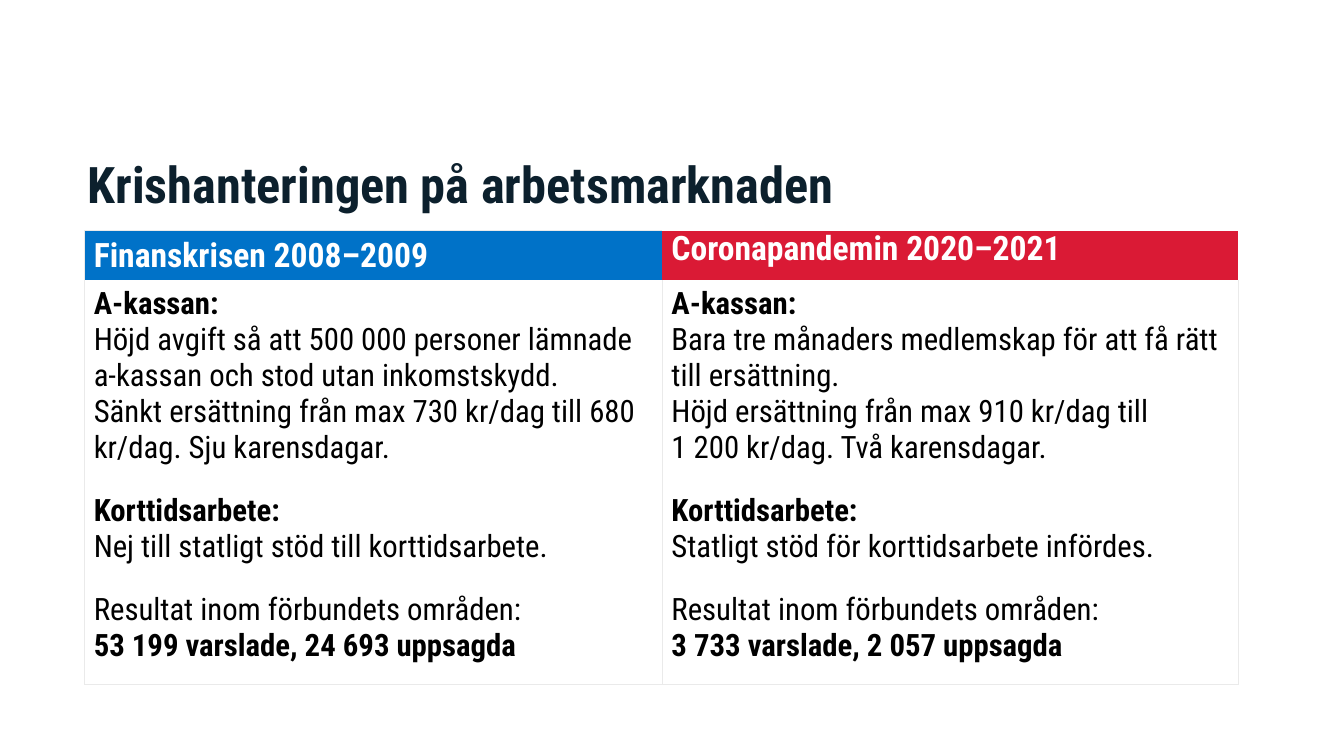
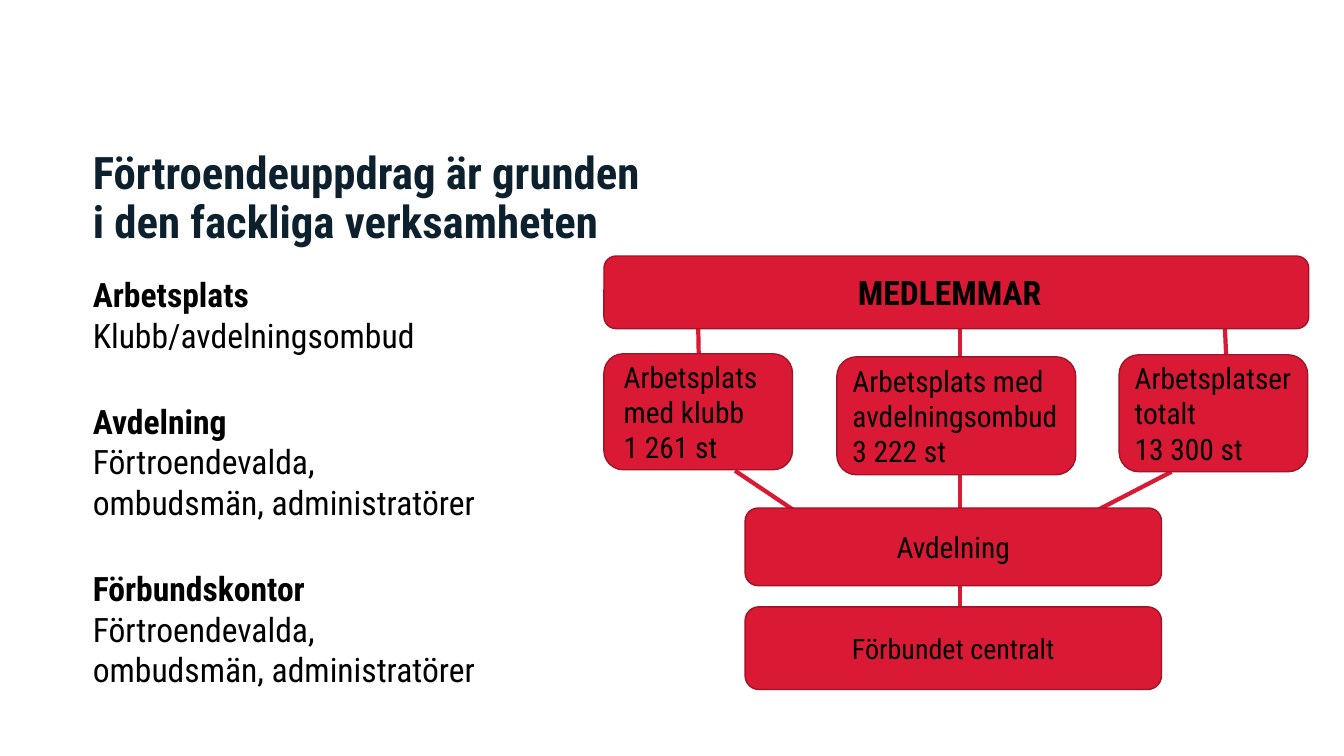
from dataclasses import dataclass

from lxml.etree import SubElement
from pptx import Presentation
from pptx.dml.color import RGBColor
from pptx.enum.shapes import MSO_CONNECTOR, MSO_SHAPE
from pptx.enum.text import MSO_ANCHOR, MSO_AUTO_SIZE, PP_ALIGN
from pptx.oxml.ns import qn
from pptx.slide import Slide
from pptx.table import _Cell
from pptx.text.text import TextFrame, _Paragraph
from pptx.util import Inches, Pt

FONT = "Roboto Condensed"
COLORS = {
    "title": "0C202D", "text": "000000", "white": "FFFFFF", "blue": "0072C8",
    "red": "DA1A35", "edge": "A11327", "grid": "EAEAEA",
}
PLAIN = "{2D5ABB26-0587-4C30-8999-92F81FD0307C}"  # table style without grid


@dataclass
class Line:
    text: str
    bold: bool = False
    gap: float = 0


@dataclass
class Column:
    head: str
    color: str
    width: float
    lines: list[Line]
    pitch: float | None = None


@dataclass
class Box:
    x: float
    y: float
    w: float
    h: float
    lines: list[Line]
    size: float = 21
    align: PP_ALIGN = PP_ALIGN.CENTER
    left: float = 0.1
    right: float = 0.1


@dataclass
class Link:
    x1: float
    y1: float
    x2: float
    y2: float


COLUMNS = [
    Column("Finanskrisen 2008–2009", "blue", 5.73, [
        Line("A-kassan:", True),
        Line("Höjd avgift så att 500 000 personer lämnade a-kassan och stod utan inkomstskydd."),
        Line("Sänkt ersättning från max 730 kr/dag till 680 kr/dag. Sju karensdagar."),
        Line("Korttidsarbete:", True, 19),
        Line("Nej till statligt stöd till korttidsarbete."),
        Line("Resultat inom förbundets områden:", gap=19),
        Line("53 199 varslade, 24 693 uppsagda", True),
    ]),
    Column("Coronapandemin 2020–2021", "red", 5.71, [
        Line("A-kassan:", True),
        Line("Bara tre månaders medlemskap för att få rätt till ersättning."),
        Line("Höjd ersättning från max 910 kr/dag till"),
        Line("1 200 kr/dag. Två karensdagar."),
        Line("Korttidsarbete:", True, 19),
        Line("Statligt stöd för korttidsarbete infördes."),
        Line("Resultat inom förbundets områden:", gap=19),
        Line("3 733 varslade, 2 057 uppsagda", True),
    ], 18),
]

ROLES = [
    Line("Arbetsplats", True),
    Line("Klubb/avdelningsombud"),
    Line("Avdelning", True, 33),
    Line("Förtroendevalda,"),
    Line("ombudsmän, administratörer"),
    Line("Förbundskontor", True, 33),
    Line("Förtroendevalda,"),
    Line("ombudsmän, administratörer"),
]

BOXES = [
    Box(5.99, 2.54, 6.99, 0.72, [Line("MEDLEMMAR", True)], 24, right=0.23),
    Box(5.99, 3.51, 1.87, 1.15, [Line("Arbetsplats med klubb"), Line("1 261 st")],
        align=PP_ALIGN.LEFT, left=0.14, right=0.05),
    Box(8.3, 3.54, 2.37, 1.17, [Line("Arbetsplats med avdelningsombud"), Line("3 222 st")],
        align=PP_ALIGN.LEFT, right=0.05),
    Box(11.1, 3.52, 1.87, 1.16, [Line("Arbetsplatser totalt"), Line("13 300 st")],
        align=PP_ALIGN.LEFT, right=0.05),
    Box(7.39, 5.04, 4.13, 0.77, [Line("Avdelning")]),
    Box(7.39, 6.02, 4.13, 0.82, [Line("Förbundet centralt")], 20),
]

LINKS = [
    Link(6.92, 2.94, 6.93, 3.52),
    Link(9.52, 3.13, 9.52, 3.64),
    Link(12.13, 2.81, 12.17, 3.73),
    Link(7.29, 4.67, 7.96, 5.12),
    Link(9.52, 4.59, 9.52, 5.19),
    Link(11.62, 4.68, 10.77, 5.12),
    Link(9.52, 5.59, 9.52, 6.16),
]


def rgb(name: str) -> RGBColor:
    return RGBColor.from_string(COLORS[name])


def add_run(para: _Paragraph, text: str, size: float, color: str, bold: bool) -> None:
    run = para.add_run()
    run.text = text
    font = run.font
    font.name, font.size, font.bold = FONT, Pt(size), bold
    font.color.rgb = rgb(color)


def write(frame: TextFrame, lines: list[Line], size: float, color: str = "text",
          align: PP_ALIGN = PP_ALIGN.LEFT) -> None:
    """Fill an empty frame, one paragraph a line."""
    for i, line in enumerate(lines):
        para = frame.add_paragraph() if i else frame.paragraphs[0]
        para.alignment = align
        para.space_before = Pt(line.gap)
        add_run(para, line.text, size, color, line.bold)


def place(shape, x: float, y: float, w: float, h: float) -> None:
    shape.left, shape.top = Inches(x), Inches(y)
    shape.width, shape.height = Inches(w), Inches(h)


def set_title(slide: Slide, rows: list[str], size: float,
              x: float, y: float, w: float, h: float) -> None:
    title = slide.shapes.title
    place(title, x, y, w, h)
    frame = title.text_frame
    frame.auto_size = MSO_AUTO_SIZE.NONE
    frame.vertical_anchor = MSO_ANCHOR.BOTTOM
    para = frame.paragraphs[0]
    para.alignment = PP_ALIGN.LEFT
    para.line_spacing = 0.9
    for i, row in enumerate(rows):
        if i:
            para.add_line_break()
        add_run(para, row, size, "title", True)


def style_cell(cell: _Cell, fill: str, sides: str) -> None:
    """Set margins, grid lines on the given sides (of LRTB) and fill."""
    cell.margin_left = cell.margin_right = Inches(0.09)
    cell.margin_top = cell.margin_bottom = Inches(0.05)
    props = cell._tc.get_or_add_tcPr()
    for side in sides:
        edge = SubElement(props, qn(f"a:ln{side}"), w=str(Pt(1)))
        solid = SubElement(edge, qn("a:solidFill"))
        SubElement(solid, qn("a:srgbClr"), val=COLORS["grid"])
    cell.fill.solid()
    cell.fill.fore_color.rgb = rgb(fill)


def add_grid(slide: Slide) -> None:
    heights = [0.47, 4.01]
    width = sum(col.width for col in COLUMNS)
    table = slide.shapes.add_table(
        2, len(COLUMNS), Inches(0.84), Inches(2.29), Inches(width), Inches(sum(heights))).table
    table.first_row = table.horz_banding = False
    table._tbl.tblPr.find(qn("a:tableStyleId")).text = PLAIN
    for row, height in zip(table.rows, heights):
        row.height = Inches(height)
    for i, col in enumerate(COLUMNS):
        table.columns[i].width = Inches(col.width)
        head, body = table.cell(0, i), table.cell(1, i)
        style_cell(head, col.color, "" if i else "LT")
        style_cell(body, "white", "LRB")
        head.vertical_anchor = MSO_ANCHOR.MIDDLE
        write(head.text_frame, [Line(col.head, True)], 24, "white")
        if col.pitch:
            head.text_frame.paragraphs[0].line_spacing = Pt(col.pitch)
        write(body.text_frame, col.lines, 22)


def add_roles(slide: Slide) -> None:
    body = slide.placeholders[1]
    place(body, 0.82, 2.67, 4.38, 4.23)
    frame = body.text_frame
    frame.auto_size = MSO_AUTO_SIZE.NONE
    write(frame, ROLES, 24)
    for para in frame.paragraphs:
        props = para._p.get_or_add_pPr()
        props.set("marL", "0")
        props.set("indent", "0")
        SubElement(props, qn("a:buNone"))


def add_link(slide: Slide, link: Link) -> None:
    line = slide.shapes.add_connector(
        MSO_CONNECTOR.STRAIGHT, Inches(link.x1), Inches(link.y1), Inches(link.x2), Inches(link.y2))
    line.line.color.rgb = rgb("red")
    line.line.width = Pt(3)
    SubElement(line._element.spPr, qn("a:effectLst"))


def add_box(slide: Slide, box: Box) -> None:
    shape = slide.shapes.add_shape(
        MSO_SHAPE.FLOWCHART_ALTERNATE_PROCESS,
        Inches(box.x), Inches(box.y), Inches(box.w), Inches(box.h))
    shape.shadow.inherit = False
    shape.fill.solid()
    shape.fill.fore_color.rgb = rgb("red")
    shape.line.color.rgb = rgb("edge")
    shape.line.width = Pt(1)
    frame = shape.text_frame
    frame.word_wrap = True
    frame.vertical_anchor = MSO_ANCHOR.MIDDLE
    frame.margin_left, frame.margin_right = Inches(box.left), Inches(box.right)
    write(frame, box.lines, box.size, align=box.align)


def main() -> None:
    deck = Presentation()
    deck.slide_width, deck.slide_height = Inches(13.33), Inches(7.5)

    crisis = deck.slides.add_slide(deck.slide_layouts[5])
    set_title(crisis, ["Krishanteringen på arbetsmarknaden"], 36, 0.77, 1.63, 7.95, 0.55)
    add_grid(crisis)

    union = deck.slides.add_slide(deck.slide_layouts[1])
    set_title(union, ["Förtroendeuppdrag är grunden", "i den fackliga verksamheten"],
              32, 0.82, 1.39, 8.32, 1.12)
    add_roles(union)
    for link in LINKS:
        add_link(union, link)
    for box in BOXES:
        add_box(union, box)

    deck.save("out.pptx")


if __name__ == "__main__":
    main()
